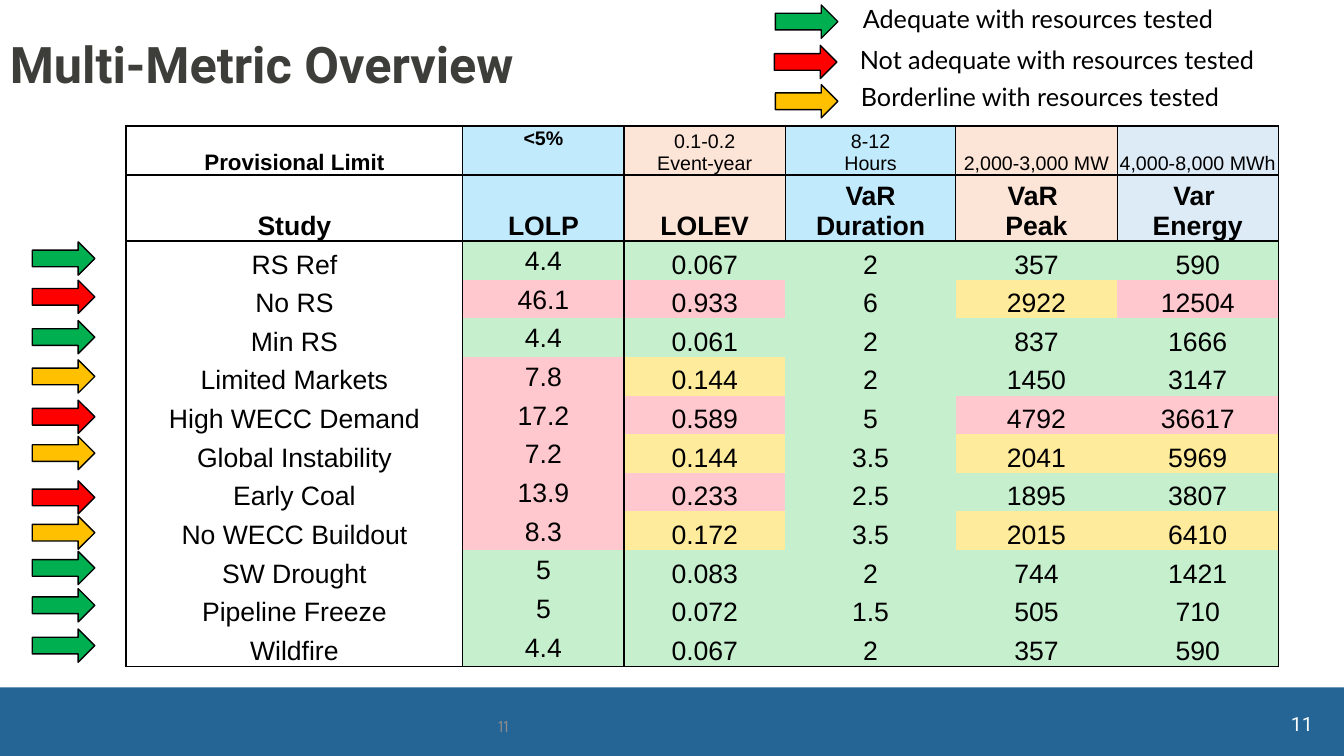
from pptx import Presentation
from pptx.dml.color import RGBColor
from pptx.enum.shapes import MSO_SHAPE
from pptx.enum.text import MSO_ANCHOR, PP_ALIGN
from pptx.oxml.ns import qn
from pptx.util import Inches, Pt
from lxml import etree

RECT, ARROW = MSO_SHAPE.RECTANGLE, MSO_SHAPE.RIGHT_ARROW
TOP, MID, LOW = MSO_ANCHOR.TOP, MSO_ANCHOR.MIDDLE, MSO_ANCHOR.BOTTOM
LEFT, MIDST, RIGHT = PP_ALIGN.LEFT, PP_ALIGN.CENTER, PP_ALIGN.RIGHT

COLORS = {
    "bar": "256595", "title": "3D3D39", "page": "F9FBFD", "gray": "8C8C8C",
    "black": "000000", "sky": "C2EAFD", "peach": "FCE4D6", "pale": "DDEBF7",
}
# Levels: 0 adequate, 1 borderline, 2 not adequate
CELLS = ["C6EFCE", "FFEB9C", "FFC7CE"]
ARROWS = ["00B050", "FFC000", "FF0000"]

# Metric name, limit text, lower and upper limit, header colour
METRICS = [
    ("LOLP", "<5%", 5, 5, "sky"),
    ("LOLEV", "0.1-0.2\nEvent-year", 0.1, 0.2, "peach"),
    ("VaR Duration", "8-12\nHours", 8, 12, "sky"),
    ("VaR \nPeak", "2,000-3,000 MW", 2000, 3000, "peach"),
    ("Var \nEnergy", "4,000-8,000 MWh", 4000, 8000, "pale"),
]
# Study, arrow top, metric values
STUDIES = [
    ("RS Ref", 2.4, 4.4, 0.067, 2, 357, 590),
    ("No RS", 2.78, 46.1, 0.933, 6, 2922, 12504),
    ("Min RS", 3.18, 4.4, 0.061, 2, 837, 1666),
    ("Limited Markets", 3.57, 7.8, 0.144, 2, 1450, 3147),
    ("High WECC Demand", 3.97, 17.2, 0.589, 5, 4792, 36617),
    ("Global Instability", 4.33, 7.2, 0.144, 3.5, 2041, 5969),
    ("Early Coal", 4.77, 13.9, 0.233, 2.5, 1895, 3807),
    ("No WECC Buildout", 5.12, 8.3, 0.172, 3.5, 2015, 6410),
    ("SW Drought", 5.47, 5, 0.083, 2, 744, 1421),
    ("Pipeline Freeze", 5.84, 5, 0.072, 1.5, 505, 710),
    ("Wildfire", 6.24, 4.4, 0.067, 2, 357, 590),
]
LEGEND = [
    (7.69, 0.05, 0, 8.46, -0.02, 3.8, "Adequate with resources tested"),
    (7.68, 0.45, 2, 8.43, 0.39, 4.25, "Not adequate with resources tested"),
    (7.69, 0.84, 1, 8.44, 0.76, 3.89, "Borderline with resources tested"),
]

deck = Presentation()
deck.slide_width, deck.slide_height = Inches(13.33), Inches(7.5)
slide = deck.slides.add_slide(deck.slide_layouts[6])


def add_form(kind, box, fill, line=None):
    form = slide.shapes.add_shape(kind, *[Inches(n) for n in box])
    form.shadow.inherit = False
    form.fill.solid()
    form.fill.fore_color.rgb = RGBColor.from_string(fill)
    if line:
        form.line.color.rgb = RGBColor.from_string(line)
        form.line.width = Pt(1)
    else:
        form.line.fill.background()


def style(frame, text, font, size, color, bold=False, align=LEFT, space=None):
    """Write text into a frame, one paragraph a line, in one format."""
    frame.text = text
    looks = {"name": font, "size": Pt(size), "bold": bold}
    for para in frame.paragraphs:
        para.alignment = align
        para.line_spacing = space
        for run in para.runs:
            for key, value in looks.items():
                setattr(run.font, key, value)
            run.font.color.rgb = RGBColor.from_string(COLORS[color])


# Footer, title and legend labels
add_form(RECT, (0, 6.82, 13.33, 0.68), COLORS["bar"])
labels = [
    ((12.52, 6.96, 0.6, 0.43), MID, True,
     ("11", "Roboto", 14, "page", False, RIGHT)),
    ((0, 0.04, 5.26, 1.25), MID, True,
     ("Multi-Metric Overview", "Roboto", 36, "title", True, LEFT, 0.9)),
    ((3.83, 7, 2.33, 0.4), MID, True,
     ("11", "League Spartan", 12, "gray", False, MIDST)),
]
for left, top, level, x, y, wide, text in LEGEND:
    add_form(ARROW, (left, top, 0.62, 0.33), ARROWS[level], COLORS["black"])
    labels.append(((x, y, wide, 0.4), TOP, False, (text, "Lato", 18, "black")))
for box, anchor, wrap, look in labels:
    frame = slide.shapes.add_textbox(*[Inches(n) for n in box]).text_frame
    frame.word_wrap = wrap
    frame.vertical_anchor = anchor
    style(frame, *look)

# Table contents as (text, fill), row by row
rows = [
    [("Provisional Limit", None)] + [(m[1], COLORS[m[4]]) for m in METRICS],
    [("Study", None)] + [(m[0], COLORS[m[4]]) for m in METRICS],
]
for name, top, *values in STUDIES:
    levels = [(v > m[2]) + (v > m[3]) for v, m in zip(values, METRICS)]
    rows.append([(name, None)] + [(str(v), CELLS[n]) for v, n in zip(values, levels)])
    # LOLP does not count towards the verdict
    add_form(ARROW, (0.32, top, 0.62, 0.33), ARROWS[max(levels[1:])], COLORS["black"])

widths = [3.34, 1.6, 1.6, 1.69, 1.6, 1.6]
heights = [0.45, 0.61] + [4.22 / 11] * 11
table = slide.shapes.add_table(
    len(rows), len(widths), Inches(1.25), Inches(1.25),
    Inches(sum(widths)), Inches(sum(heights))).table
table.first_row = table.horz_banding = False
for col, wide in zip(table.columns, widths):
    col.width = Inches(wide)
for row, high in zip(table.rows, heights):
    row.height = Inches(high)

last = len(rows) - 1
for r, row in enumerate(rows):
    head = r < 2
    for c, (text, fill) in enumerate(row):
        cell = table.cell(r, c)
        lolp = c == 1 and not head
        pads = (0.07, 0, 0.07, 0) if lolp else (0.02, 0.02, 0.02, 0)
        for side, pad in zip(("left", "top", "right", "bottom"), pads):
            setattr(cell, "margin_" + side, Inches(pad))
        cell.vertical_anchor = MID if lolp else TOP if text == "<5%" else LOW
        size = 19 if r else 14 if c else 16
        bold = r == 1 or (r == 0 and c < 2)
        style(cell.text_frame, text, "Arial", size, "black", bold, MIDST,
              1.07 if lolp else None)

        # Line width on each side; 0 hides the line
        edges = [1 if x in (0, 1, 2, 6) else 0.5 if head else 0 for x in (c, c + 1)]
        sides = {"lnL": edges[0], "lnR": edges[1],
                 "lnT": 1 if r < 3 else 0, "lnB": 1 if head or r == last else 0}
        props = cell._tc.get_or_add_tcPr()
        for tag, wide in sides.items():
            line = etree.SubElement(props, qn("a:" + tag), w=str(Pt(wide)))
            if wide:
                paint = etree.SubElement(line, qn("a:solidFill"))
                etree.SubElement(paint, qn("a:srgbClr"), val=COLORS["black"])
            else:
                etree.SubElement(line, qn("a:noFill"))
        if fill:
            cell.fill.solid()
            cell.fill.fore_color.rgb = RGBColor.from_string(fill)
        else:
            cell.fill.background()

deck.save("out.pptx")
